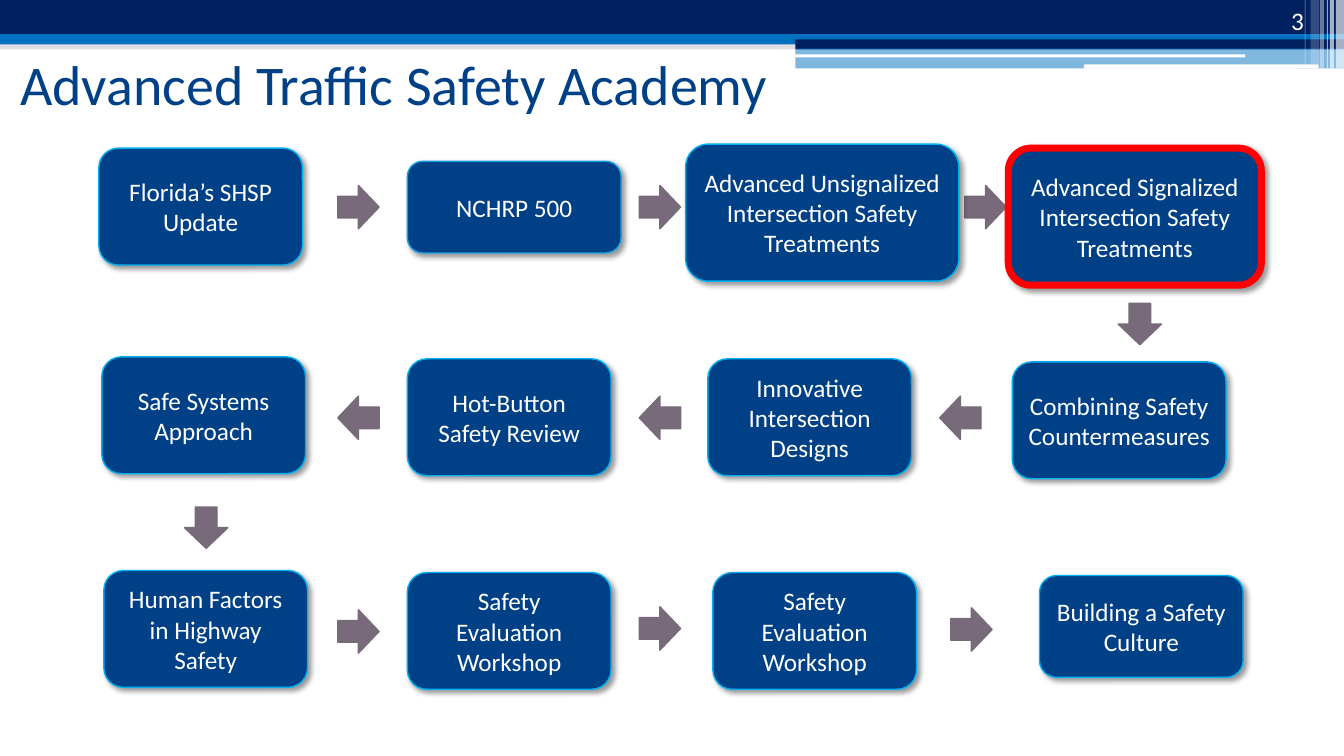
from lxml import etree
from pptx import Presentation
from pptx import util as u
from pptx.dml.color import RGBColor
from pptx.enum import shapes, text
from pptx.oxml import ns

PX = 9144  # EMU in one px, 100 px to the inch
KIND = shapes.MSO_SHAPE
WHITE, NAVY, BLUE, DEEP = "FFFFFF", "002060", "0070C0", "004087"
SKY, PLUM, RED = "00B0F0", "78697B", "FF0000"
RIGHT, DOWN, LEFT = 0, 90, 180

# Header bands: left, top, width, height, colour, opacity
BANDS = [
    (0, 40, 1333, 9, "C4BCC6", 50),
    (0, 0, 1333, 34, NAVY, 100),
    (0, 34, 1333, 10, BLUE, 100),
    (789, 39, 544, 10, NAVY, 100),
    (789, 48, 544, 20, BLUE, 50),
]
RULES = [(788, 54, 447, 3), (1075, 64, 233, 4)]
# Fading stripes at the right edge: left, width, height, opacity
STRIPES = [(1325, 8, 68, 65), (1319, 4, 68, 65), (1316, 1, 68, 60),
           (1309, 4, 68, 40), (1300, 8, 64, 20), (1294, 1, 64, 30)]

# Course steps: left, top, width, height, label, line colour, line width
STEPS = [
    (98, 147, 202, 116, "Florida’s SHSP Update", SKY, 1),
    (404, 160, 212, 91, "NCHRP 500", "17A0E4", 1),
    (680, 143, 271, 136, "Advanced Unsignalized Intersection Safety Treatments", SKY, 1),
    (1000, 147, 251, 136, "Advanced Signalized Intersection Safety Treatments", RED, 5),
    (1004, 359, 212, 116, "Combining Safety Countermeasures", SKY, 1),
    (702, 356, 202, 116, "Innovative Intersection Designs", SKY, 1),
    (404, 356, 202, 116, "Hot-Button Safety Review", SKY, 1),
    (101, 354, 202, 116, "Safe Systems Approach", SKY, 1),
    (103, 566, 202, 116, "Human Factors in Highway Safety", SKY, 1),
    (404, 568, 202, 116, "Safety Evaluation Workshop", SKY, 1),
    (707, 568, 202, 116, "Safety Evaluation Workshop", SKY, 1),
    (1031, 571, 202, 101, "Building a Safety Culture", SKY, 1),
]
# Arrows between steps: left, top, turn
ARROWS = [
    (335, 184, RIGHT), (634, 184, RIGHT), (957, 184, RIGHT), (1110, 300, DOWN),
    (932, 393, LEFT), (634, 393, LEFT), (335, 393, LEFT), (184, 502, DOWN),
    (335, 605, RIGHT), (634, 602, RIGHT), (943, 603, RIGHT),
]


def tint(code):
    return RGBColor.from_string(code)


def scale(*sizes):
    return [u.Emu(size * PX) for size in sizes]


def apply(item, style):
    for name, value in style.items():
        setattr(item, name, value)


def add_shape(slide, kind, place, fill, clear=100):
    shape = slide.shapes.add_shape(kind, *scale(*place))
    shape.shadow.inherit = False
    shape.fill.solid()
    shape.fill.fore_color.rgb = tint(fill)
    shape.line.fill.background()
    if clear < 100:
        color = shape.fill._xPr.find(ns.qn("a:solidFill"))[0]
        etree.SubElement(color, ns.qn("a:alpha"), val=str(clear * 1000))
    return shape


def set_line(shape, color, width):
    shape.line.color.rgb = tint(color)
    shape.line.width = u.Pt(width)


def add_shadow(shape):
    effect = shape._element.spPr.find(ns.qn("a:effectLst"))
    shade = etree.SubElement(effect, ns.qn("a:outerShdw"), blurRad=str(u.Pt(4)),
                             dist=str(u.Pt(3)), dir="2700000", algn="tl", rotWithShape="0")
    color = etree.SubElement(shade, ns.qn("a:srgbClr"), val="000000")
    etree.SubElement(color, ns.qn("a:alpha"), val="40000")


def write(shape, words, size, color, align, anchor):
    frame = shape.text_frame
    apply(frame, {"text": words, "word_wrap": True, "vertical_anchor": anchor,
                  "auto_size": text.MSO_AUTO_SIZE.NONE})
    para = frame.paragraphs[0]
    para.alignment = align
    apply(para.font, {"name": "Calibri", "size": u.Pt(size)})
    para.font.color.rgb = tint(color)


def add_step(slide, left, top, width, height, label, edge, weight):
    step = add_shape(slide, KIND.ROUNDED_RECTANGLE, (left, top, width, height), DEEP)
    set_line(step, edge, weight)
    add_shadow(step)
    write(step, label, 18, WHITE, text.PP_ALIGN.CENTER, text.MSO_ANCHOR.MIDDLE)


def add_arrow(slide, left, top, turn):
    arrow = add_shape(slide, KIND.RIGHT_ARROW, (left, top, 41, 43), PLUM)
    set_line(arrow, PLUM, 1)
    arrow.rotation = turn


def add_header(slide):
    for *place, color, clear in BANDS:
        add_shape(slide, KIND.RECTANGLE, place, color, clear)
    for place in RULES:
        add_shape(slide, KIND.ROUNDED_RECTANGLE, place, WHITE)
    for left, width, height, clear in STRIPES:
        add_shape(slide, KIND.RECTANGLE, (left, 0, width, height), WHITE, clear)


def main():
    deck = Presentation()
    deck.slide_width, deck.slide_height = scale(1333, 750)
    slide = deck.slides.add_slide(deck.slide_layouts[5])

    # Header and title
    add_header(slide)
    title = slide.shapes.title
    apply(title, dict(zip(("left", "top", "width", "height"), scale(10, 31, 1136, 102))))
    write(title, "Advanced Traffic Safety Academy", 40, DEEP,
          text.PP_ALIGN.LEFT, text.MSO_ANCHOR.MIDDLE)

    # Flow of courses
    for arrow in ARROWS:
        add_arrow(slide, *arrow)
    for step in STEPS:
        add_step(slide, *step)

    # Page number
    page = slide.shapes.add_textbox(*scale(1192, 0, 111, 40))
    write(page, "3", 18, WHITE, text.PP_ALIGN.RIGHT, text.MSO_ANCHOR.BOTTOM)

    deck.save("out.pptx")


if __name__ == "__main__":
    main()
